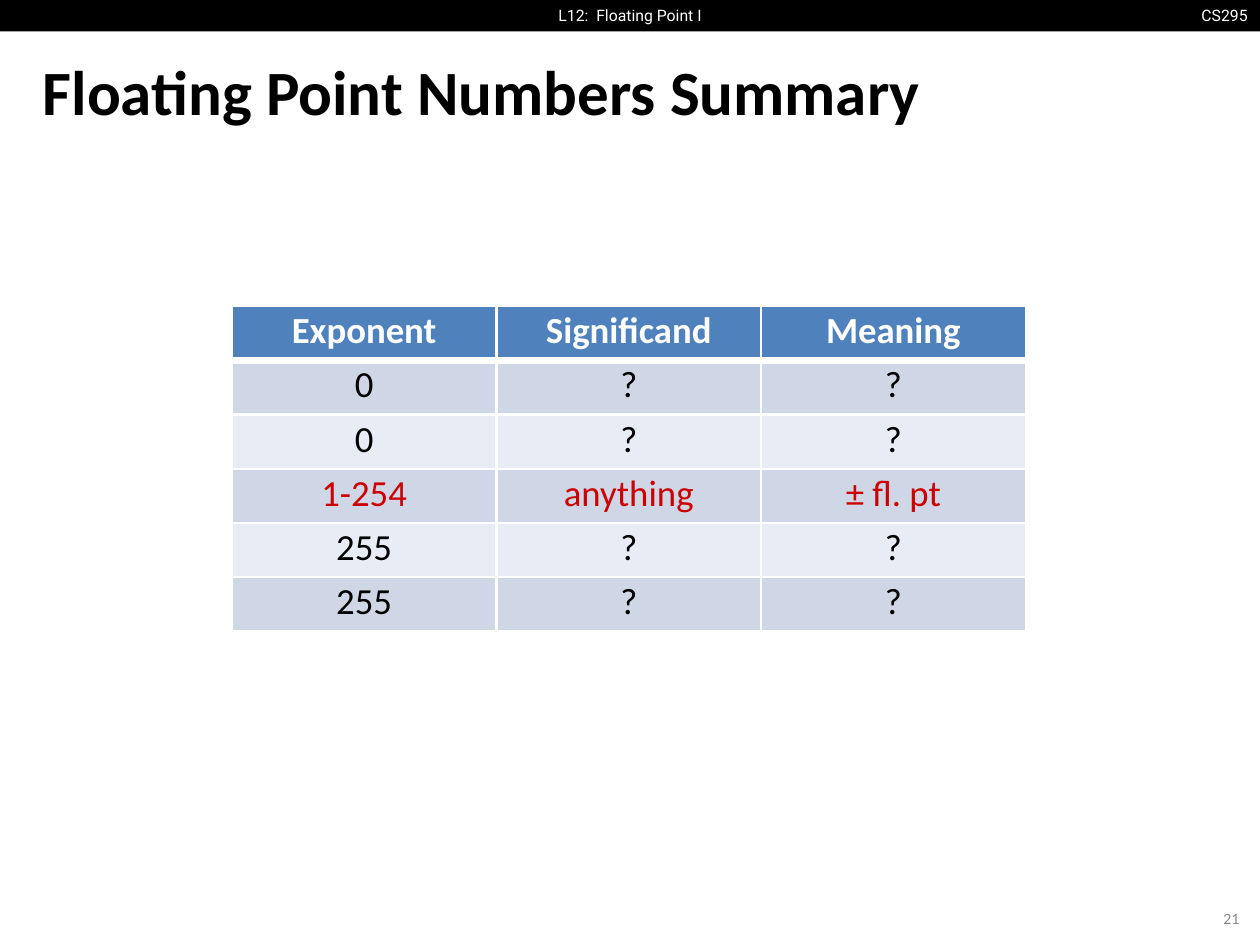
from lxml.etree import SubElement
from pptx import Presentation
from pptx.dml.color import RGBColor
from pptx.enum.shapes import MSO_SHAPE
from pptx.enum.text import MSO_ANCHOR, MSO_AUTO_SIZE, PP_ALIGN
from pptx.oxml.ns import qn
from pptx.util import Inches, Pt

BLACK = RGBColor(0x00, 0x00, 0x00)
WHITE = RGBColor(0xFF, 0xFF, 0xFF)
GREY = RGBColor(0x88, 0x88, 0x88)
RED = RGBColor(0xCC, 0x00, 0x00)
HEADER_BLUE = RGBColor(0x4F, 0x81, 0xBD)
BANDS = (RGBColor(0xE8, 0xEC, 0xF4), RGBColor(0xCF, 0xD7, 0xE7))

PAGE_WIDTH, PAGE_HEIGHT = 10, 7.5
BAR_HEIGHT = PAGE_HEIGHT / 30
COLUMN_WIDTH, ROW_HEIGHT = 2.1, 0.43
THIN, THICK = 1.5, 4.25
HIGHLIGHTED_ROW = 3
ROWS = [
    ("Exponent", "Significand", "Meaning"),
    ("0", "?", "?"),
    ("0", "?", "?"),
    ("1-254", "anything", "± fl. pt"),
    ("255", "?", "?"),
    ("255", "?", "?"),
]


def format_text(frame, text, size, color, font="Calibri", align=PP_ALIGN.LEFT, bold=False):
    frame.text = text
    para = frame.paragraphs[0]
    para.alignment = align
    para.font.name = font
    para.font.size = Pt(size)
    para.font.bold = bold
    para.font.color.rgb = color
    return para


def set_margins(owner, side, top, bottom):
    owner.margin_left = owner.margin_right = Inches(side)
    owner.margin_top, owner.margin_bottom = Inches(top), Inches(bottom)


def add_label(page, place, text, margins, color, **style):
    box = page.shapes.add_textbox(*map(Inches, place))
    frame = box.text_frame
    frame.word_wrap = False
    set_margins(frame, *margins)
    format_text(frame, text, 9, color, **style)
    return frame


def add_header_bar(page):
    bar = page.shapes.add_shape(MSO_SHAPE.RECTANGLE, 0, 0, Inches(PAGE_WIDTH), Inches(BAR_HEIGHT))
    bar.shadow.inherit = False
    bar.fill.solid()
    bar.fill.fore_color.rgb = BLACK
    bar.line.fill.background()
    labels = [("CS295", 9.41, 0.59, PP_ALIGN.RIGHT),
              ("L12:  Floating Point I", 4.07, 1.86, PP_ALIGN.CENTER)]
    for text, left, width, align in labels:
        add_label(page, (left, 0, width, BAR_HEIGHT), text, (0.1, 0.05, 0.05), WHITE,
                  font="Roboto", align=align)


def set_title(page, text):
    title = page.shapes.title
    title.left, title.top, title.width, title.height = map(Inches, (0.34, 0.4, 9.19, 0.62))
    frame = title.text_frame
    frame.auto_size = MSO_AUTO_SIZE.NONE
    frame.vertical_anchor = MSO_ANCHOR.MIDDLE
    set_margins(frame, 0, 0.01, 0)
    format_text(frame, text, 36, BLACK, bold=True)


def set_borders(cell, top, bottom):
    properties = cell._tc.get_or_add_tcPr()
    widths = {"a:lnL": THIN, "a:lnR": THIN, "a:lnT": top, "a:lnB": bottom}
    for tag, width in widths.items():
        line = SubElement(properties, qn(tag), w=str(Pt(width)))
        fill = SubElement(line, qn("a:solidFill"))
        SubElement(fill, qn("a:srgbClr"), val=str(WHITE))


def fill_cell(cell, text, row):
    is_header = row == 0
    # Borders come before the fill in the cell properties
    set_borders(cell, THICK if row == 1 else THIN, THICK if is_header else THIN)
    cell.fill.solid()
    cell.fill.fore_color.rgb = HEADER_BLUE if is_header else BANDS[row % 2]
    set_margins(cell, 0, 0.02, 0)
    color = WHITE if is_header else RED if row == HIGHLIGHTED_ROW else BLACK
    para = format_text(cell.text_frame, text, 21, color, align=PP_ALIGN.CENTER, bold=is_header)
    para.space_before = Pt(1.8)


def add_summary_table(page, left, top):
    columns = len(ROWS[0])
    table = page.shapes.add_table(
        len(ROWS), columns, Inches(left), Inches(top),
        Inches(columns * COLUMN_WIDTH), Inches(len(ROWS) * ROW_HEIGHT)).table
    for row, texts in enumerate(ROWS):
        for column, text in enumerate(texts):
            fill_cell(table.cell(row, column), text, row)


def main():
    deck = Presentation()
    deck.slide_width, deck.slide_height = Inches(PAGE_WIDTH), Inches(PAGE_HEIGHT)
    page = deck.slides.add_slide(deck.slide_layouts[5])

    # Header bar and title
    add_header_bar(page)
    set_title(page, "Floating Point Numbers Summary")

    # Table of exponent and significand cases
    add_summary_table(page, 1.84, 2.43)

    # Page number
    number = add_label(page, (9.67, 7.2, 0.21, 0.18), "21", (0.04, 0, 0), GREY)
    number.vertical_anchor = MSO_ANCHOR.MIDDLE

    deck.save("out.pptx")


if __name__ == "__main__":
    main()
